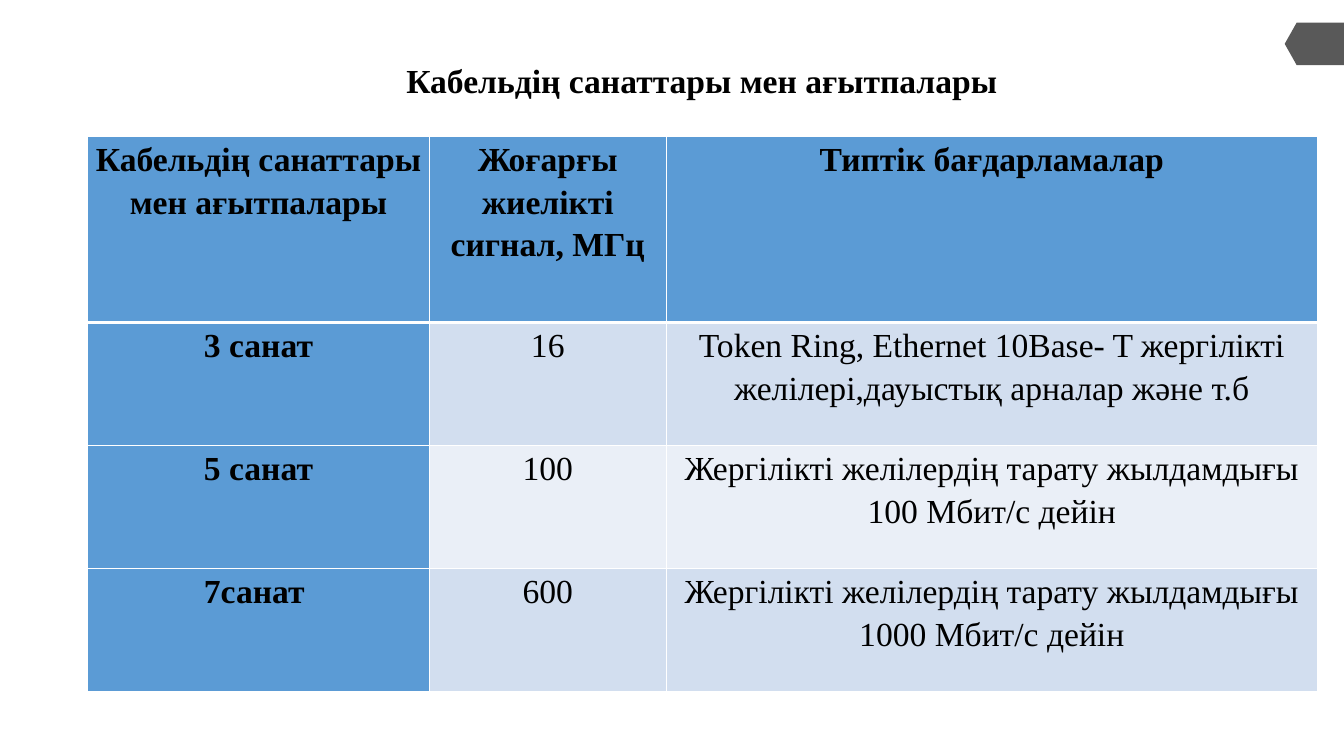
from pptx import Presentation
from pptx.dml.color import RGBColor
from pptx.enum import shapes, text
from pptx.oxml import parse_xml
from pptx.oxml import ns
from pptx.util import Pt

BLACK = RGBColor(0x00, 0x00, 0x00)
WHITE = RGBColor(0xFF, 0xFF, 0xFF)
GREY = RGBColor(0x59, 0x59, 0x59)
BLUE = RGBColor(0x5B, 0x9B, 0xD5)
BANDS = (RGBColor(0xD2, 0xDE, 0xEF), RGBColor(0xEA, 0xEF, 0xF7))

FONT = {"name": "Times New Roman", "size": Pt(24)}
CELL_FORMAT = {
    "margin_left": Pt(5), "margin_right": Pt(5),
    "margin_top": Pt(0), "margin_bottom": Pt(0),
    "vertical_anchor": text.MSO_ANCHOR.TOP,
}
TITLE_FORMAT = {
    "margin_left": Pt(42.5), "margin_right": Pt(7.2),
    "margin_top": Pt(3.6), "margin_bottom": Pt(3.6),
    "vertical_anchor": text.MSO_ANCHOR.TOP,
    "word_wrap": False, "auto_size": text.MSO_AUTO_SIZE.NONE,
}

COLUMN_WIDTHS = (244.1, 169.2, 465.1)
HEADER_HEIGHT, ROW_HEIGHT = 133.2, 87.84
TITLE = "Кабельдің санаттары мен ағытпалары"
ROWS = (
    (TITLE, "Жоғарғы жиелікті сигнал, МГц", "Типтік бағдарламалар"),
    ("3 санат", "16",
     "Token Ring, Ethernet 10Base- T жергілікті желілері,дауыстық арналар және т.б"),
    ("5 санат", "100", "Жергілікті желілердің тарату жылдамдығы 100 Мбит/с дейін"),
    ("7санат ", "600", "Жергілікті желілердің тарату жылдамдығы 1000 Мбит/с дейін"),
)


def apply(target, values):
    for name, value in values.items():
        setattr(target, name, value)


def write(para, wording, bold, align):
    para.alignment = align
    span = para.add_run()
    span.text = wording
    apply(span.font, {**FONT, "bold": bold})
    span.font.color.rgb = BLACK


def add_title(page):
    box = page.shapes.title
    apply(box, {"left": Pt(247.7), "top": Pt(38.9),
                "width": Pt(476.6), "height": Pt(58.3)})
    apply(box.text_frame, TITLE_FORMAT)
    write(box.text_frame.paragraphs[0], TITLE, True, text.PP_ALIGN.LEFT)


def add_corner_tag(page):
    tag = page.shapes.add_shape(
        shapes.MSO_SHAPE.FLOWCHART_OFFPAGE_CONNECTOR,
        Pt(923.8), Pt(10.1), Pt(30.2), Pt(42.5))
    tag.rotation = 90
    tag.shadow.inherit = False
    tag.fill.solid()
    tag.fill.fore_color.rgb = GREY
    tag.line.fill.background()


def set_borders(cell, widths):
    """Draw white cell edges; widths maps lnL, lnR, lnT and lnB to points."""
    properties = cell._tc.get_or_add_tcPr()
    for position, (edge, width) in enumerate(widths.items()):
        properties.insert(position, parse_xml(
            f'<a:{edge} {ns.nsdecls("a")} w="{Pt(width)}"><a:solidFill>'
            f'<a:srgbClr val="{WHITE}"/></a:solidFill></a:{edge}>'))


def fill_cell(cell, wording, row, column):
    heading = row == 0 or column == 0
    apply(cell, CELL_FORMAT)
    cell.fill.solid()
    cell.fill.fore_color.rgb = BLUE if heading else BANDS[(row - 1) % 2]
    para = cell.text_frame.paragraphs[0]
    para.line_spacing = 1.15
    write(para, wording, heading, text.PP_ALIGN.CENTER)
    set_borders(cell, {"lnL": 1, "lnR": 1,
                       "lnT": 3 if row == 1 else 1,
                       "lnB": 3 if row == 0 else 1})


def add_category_table(page):
    heights = [HEADER_HEIGHT] + [ROW_HEIGHT] * (len(ROWS) - 1)
    table = page.shapes.add_table(
        len(ROWS), len(COLUMN_WIDTHS), Pt(62.6), Pt(97.2),
        Pt(sum(COLUMN_WIDTHS)), Pt(sum(heights))).table
    for column, width in zip(table.columns, COLUMN_WIDTHS):
        column.width = Pt(width)
    for row, height in zip(table.rows, heights):
        row.height = Pt(height)
    for r, wordings in enumerate(ROWS):
        for c, wording in enumerate(wordings):
            fill_cell(table.cell(r, c), wording, r, c)


def main():
    deck = Presentation()
    apply(deck, {"slide_width": Pt(960), "slide_height": Pt(540)})
    page = deck.slides.add_slide(deck.slide_layouts.get_by_name("Title Only"))
    add_corner_tag(page)
    add_title(page)
    add_category_table(page)
    deck.save("out.pptx")


if __name__ == "__main__":
    main()
